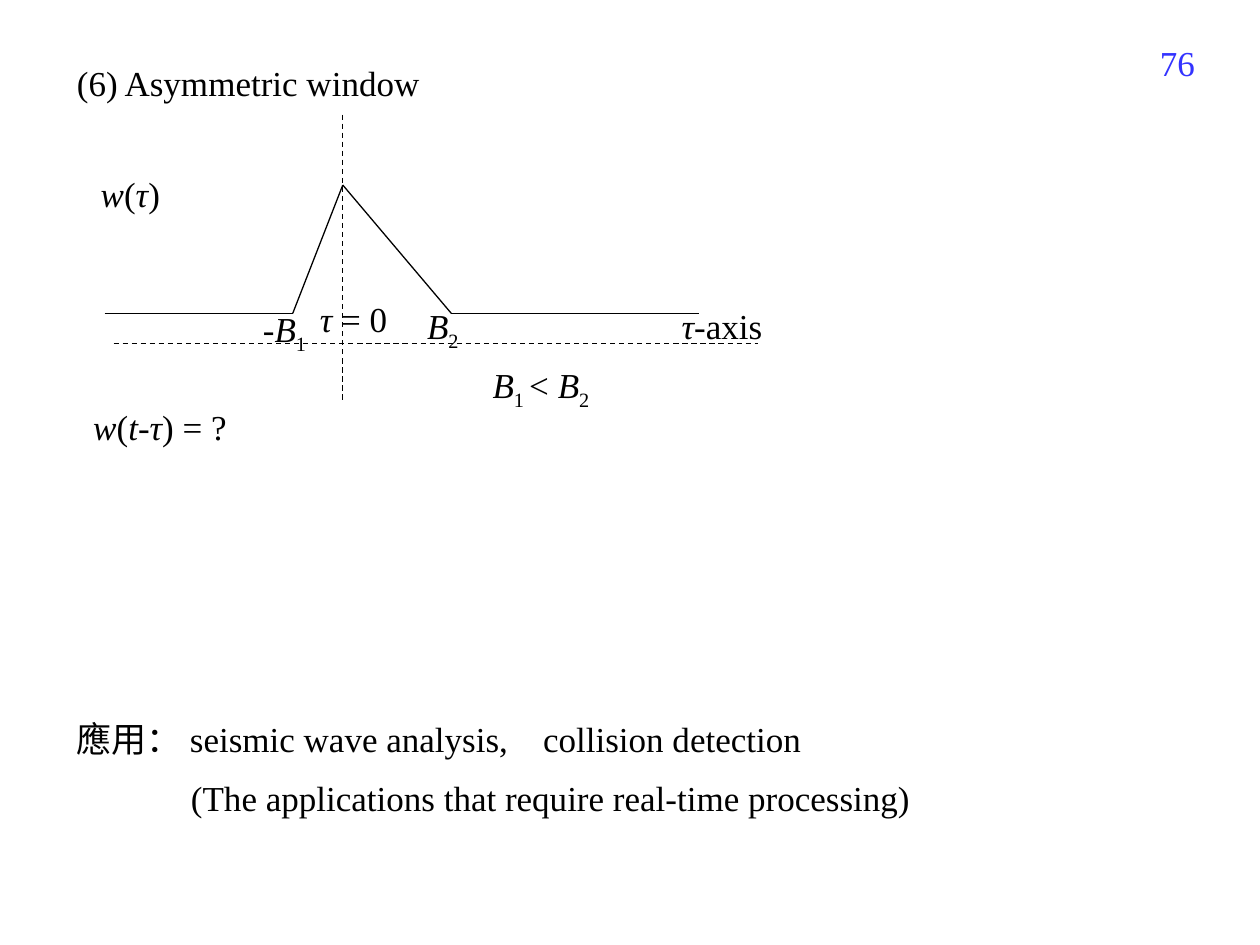
from itertools import pairwise

from lxml.etree import SubElement
from pptx import Presentation
from pptx.dml.color import RGBColor
from pptx.enum.dml import MSO_LINE
from pptx.enum.shapes import MSO_CONNECTOR
from pptx.enum.text import MSO_AUTO_SIZE, PP_ALIGN
from pptx.oxml.ns import qn
from pptx.util import Cm, Pt

COLORS = {"text": "000000", "line": "000000", "page_number": "3333FF"}
FONT = "Times New Roman"
PLAIN, ITALIC, SUBSCRIPT = "plain", "italic", "subscript"


def add_run(paragraph, text, style=PLAIN, color="text"):
    run = paragraph.add_run()
    run.text = text
    run.font.name = FONT
    run.font.size = Pt(20)
    run.font.italic = style == ITALIC
    run.font.color.rgb = RGBColor.from_string(COLORS[color])
    if style == SUBSCRIPT:
        run._r.get_or_add_rPr().set("baseline", "-25000")


def add_text(slide, left, top, width, height, runs, color="text"):
    """Add a one-paragraph text box from (text, style) runs and return its frame."""
    box = slide.shapes.add_textbox(Cm(left), Cm(top), Cm(width), Cm(height))
    frame = box.text_frame
    frame.word_wrap = True
    frame.auto_size = MSO_AUTO_SIZE.NONE
    for text, style in runs:
        add_run(frame.paragraphs[0], text, style, color)
    return frame


def add_line(slide, start, end, dashed=False):
    line = slide.shapes.add_connector(
        MSO_CONNECTOR.STRAIGHT, *(Cm(value) for value in (*start, *end)))
    line.line.color.rgb = RGBColor.from_string(COLORS["line"])
    line.line.width = Pt(0.75)
    if dashed:
        line.line.dash_style = MSO_LINE.DASH
    SubElement(line._element.spPr, qn("a:effectLst"))


def add_window_plot(slide):
    baseline, peak_x = 6.32, 6.91
    window = [(2.11, baseline), (5.9, baseline), (peak_x, 3.73),
              (9.1, baseline), (14.1, baseline)]
    for start, end in pairwise(window):
        add_line(slide, start, end)
    add_line(slide, (peak_x, 2.31), (peak_x, 8.13), dashed=True)
    add_line(slide, (2.29, 6.93), (15.29, 6.93), dashed=True)

    labels = [
        (6.2, 5.87, 2.6, [("τ", ITALIC), (" = 0", PLAIN)]),
        (13.49, 6.02, 2.6, [("τ", ITALIC), ("-axis", PLAIN)]),
        (5.05, 6.07, 1.45, [("-", PLAIN), ("B", ITALIC), ("1", SUBSCRIPT)]),
        (8.36, 6.02, 2.6, [("B", ITALIC), ("2", SUBSCRIPT)]),
        (9.68, 7.21, 2.85, [("B", ITALIC), ("1 ", SUBSCRIPT), ("< ", PLAIN),
                            ("B", ITALIC), ("2", SUBSCRIPT)]),
        (1.78, 3.35, 2.6, [("w", ITALIC), ("(", PLAIN), ("τ", ITALIC), (")", PLAIN)]),
        (1.63, 8.05, 3.8, [("w", ITALIC), ("(", PLAIN), ("t", ITALIC), ("-", PLAIN),
                           ("τ", ITALIC), (") = ?", PLAIN)]),
    ]
    for left, top, width, runs in labels:
        add_text(slide, left, top, width, 1.1, runs)


def add_applications(slide):
    frame = add_text(slide, 1.3, 14.33, 17.6, 2.4, [
        ("應用： seismic wave analysis,\tcollision detection", PLAIN)])
    tab_list = SubElement(frame.paragraphs[0]._p.get_or_add_pPr(), qn("a:tabLst"))
    SubElement(tab_list, qn("a:tab"), pos=str(Cm(9.4)), algn="l")

    detail = frame.add_paragraph()
    detail.space_before = Pt(10)
    detail._p.get_or_add_pPr().set("marL", str(Cm(2.3)))
    add_run(detail, "(The applications that require real-time processing)")


def main():
    presentation = Presentation()
    presentation.slide_width = Cm(25.4)
    presentation.slide_height = Cm(19.05)
    slide = presentation.slides.add_slide(presentation.slide_layouts[6])

    page_number = add_text(slide, 22.1, 0.71, 2.24, 1.32, [("76", PLAIN)], "page_number")
    page_number.paragraphs[0].alignment = PP_ALIGN.RIGHT
    add_text(slide, 1.3, 1.12, 17.2, 1.1, [("(6) Asymmetric window", PLAIN)])
    add_window_plot(slide)
    add_applications(slide)
    presentation.save("out.pptx")


if __name__ == "__main__":
    main()
